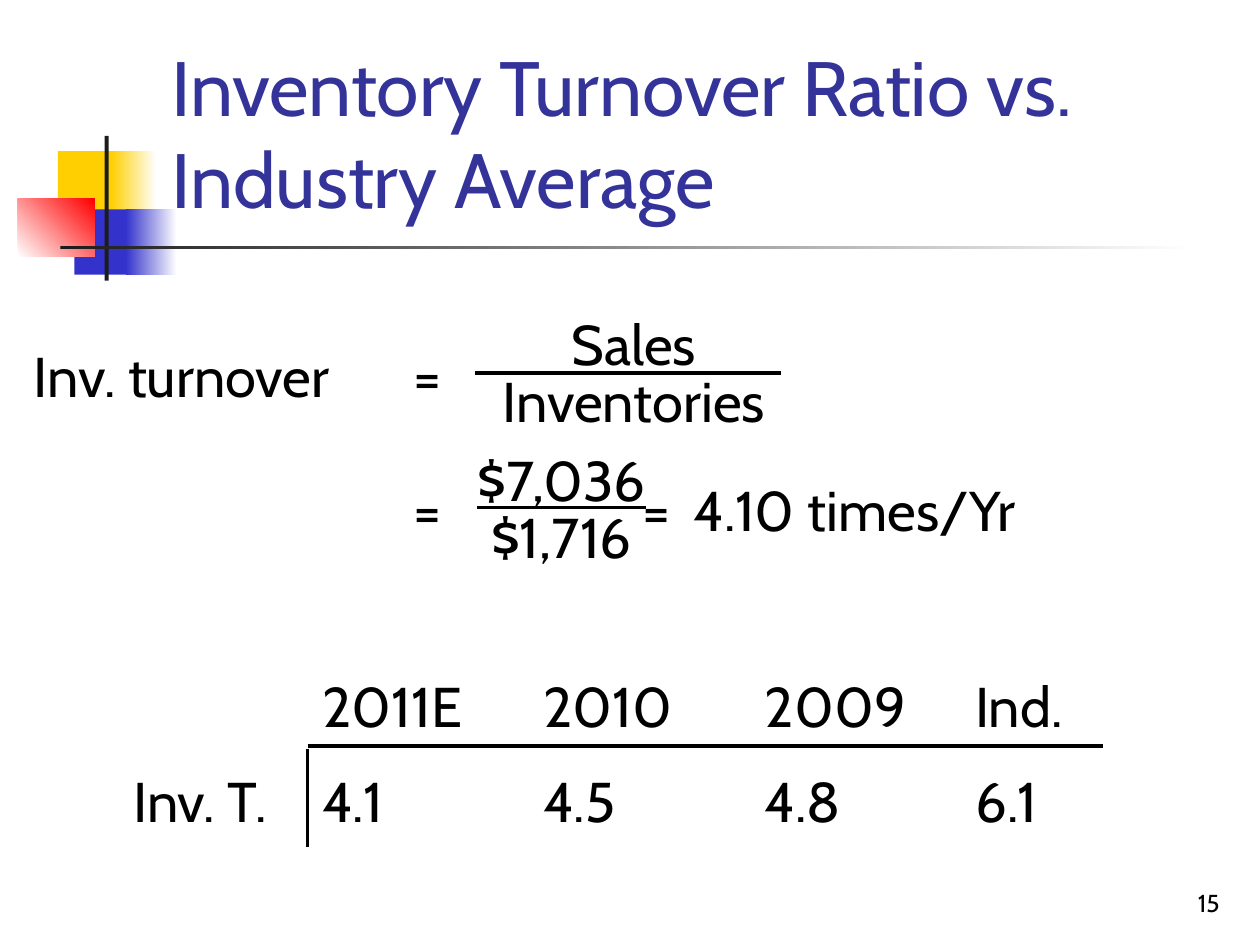
from pptx import Presentation
from pptx import util as u
from pptx.dml.color import RGBColor
from pptx.enum import shapes, text
from pptx.oxml.ns import qn
from lxml import etree

BLACK = RGBColor(0x00, 0x00, 0x00)
WHITE = RGBColor(0xFF, 0xFF, 0xFF)
YELLOW = RGBColor(0xFF, 0xCF, 0x01)
BLUE = RGBColor(0x33, 0x33, 0xCC)
RED = RGBColor(0xFF, 0x00, 0x00)
CHARCOAL = RGBColor(0x1C, 0x1C, 0x1C)
TITLE_BLUE = RGBColor(0x33, 0x33, 0x99)

FONT = "Cabin"
BODY_SIZE = 32
CENTER, RIGHT = text.PP_ALIGN.CENTER, text.PP_ALIGN.RIGHT


def add_block(slide, left, top, width, height, start, end=None, angle=0):
    """Borderless rectangle, solid or fading from start to end."""
    block = slide.shapes.add_shape(
        shapes.MSO_SHAPE.RECTANGLE, *map(u.Cm, (left, top, width, height)))
    block.shadow.inherit = False
    block.line.fill.background()
    if end is None:
        block.fill.solid()
        block.fill.fore_color.rgb = start
        return
    block.fill.gradient()
    block.fill.gradient_angle = angle
    for stop, color in zip(block.fill.gradient_stops, (start, end)):
        stop.color.rgb = color


def add_rule(slide, x1, y1, x2, y2):
    rule = slide.shapes.add_connector(
        shapes.MSO_CONNECTOR.STRAIGHT, *map(u.Cm, (x1, y1, x2, y2)))
    rule.line.color.rgb = BLACK
    rule.line.width = u.Pt(2)
    etree.SubElement(rule._element.spPr, qn("a:effectLst"))


def add_text(slide, box, lines, size=BODY_SIZE, color=BLACK, wrap=True,
             anchor=text.MSO_ANCHOR.TOP, tabs=(), **paragraph_format):
    """Text box with one paragraph per line; tabs are in cm from the inset."""
    frame = slide.shapes.add_textbox(*map(u.Cm, box)).text_frame
    frame.word_wrap = wrap
    frame.vertical_anchor = anchor
    for number, line in enumerate(lines):
        paragraph = frame.add_paragraph() if number else frame.paragraphs[0]
        for name, value in paragraph_format.items():
            setattr(paragraph, name, value)
        run = paragraph.add_run()
        run.text = line
        for name, value in {"name": FONT, "size": u.Pt(size)}.items():
            setattr(run.font, name, value)
        run.font.color.rgb = color
        if tabs:
            stops = etree.SubElement(
                paragraph._p.get_or_add_pPr(), qn("a:tabLst"))
            for position in tabs:
                etree.SubElement(stops, qn("a:tab"),
                                 pos=str(int(u.Cm(position))), algn="l")
    return frame.paragraphs


def add_ornament(slide, left, top):
    add_block(slide, left + 0.81, top + 0.31, 1.22, 1.32, YELLOW)
    add_block(slide, left + 1.88, top + 0.31, 0.91, 1.32, YELLOW, WHITE)
    add_block(slide, left + 1.14, top + 1.48, 1.17, 1.32, BLUE)
    add_block(slide, left + 2.18, top + 1.48, 1.02, 1.32, BLUE, WHITE)
    add_block(slide, left, top + 1.27, 1.55, 1.17, WHITE, RED, angle=45)
    add_block(slide, left + 1.75, top, 0.08, 2.92, CHARCOAL)
    add_block(slide, left + 0.86, top + 2.21, 22.86, 0.08, CHARCOAL, WHITE)


def add_fraction(slide, box, numerator, denominator):
    return add_text(slide, box, (numerator, denominator), wrap=False,
                    alignment=CENTER, line_spacing=0.85)


def add_turnover_equation(slide, left, top, width, height):
    lines = add_text(slide, (left, top + 0.44, width, height - 0.44),
                     ("Inv. turnover\t=", "\t=\t=\t4.10 times/Yr"),
                     tabs=(7.65, 12.27, 13.31))
    lines[1].space_before = u.Pt(38)
    add_fraction(slide, (left + 9.3, top, 6.1, 2.54), "Sales", "Inventories")
    add_rule(slide, left + 9.15, top + 1.2, left + 15.32, top + 1.2)
    amounts = add_fraction(slide, (left + 8.92, top + 2.75, 3.94, 2.54),
                           "$7,036", "$1,716")
    amounts[0].runs[0].font.underline = True


def add_ratio_comparison(slide, left, top, width, height):
    rows = (("", "2011E", "2010", "2009", "Ind."),
            ("Inv. T.", "4.1", "4.5", "4.8", "6.1"))
    lines = add_text(slide, (left, top, width, height),
                     ["\t".join(row) for row in rows],
                     tabs=(3.81, 8.26, 12.73, 16.97))
    lines[1].space_before = u.Pt(16)
    axis = left + 3.76
    add_rule(slide, axis, top + 1.63, axis + 16.03, top + 1.63)
    add_rule(slide, axis, top + 1.68, axis, top + 3.66)


def main():
    deck = Presentation()
    deck.slide_width, deck.slide_height = u.Cm(25.4), u.Cm(19.05)
    slide = deck.slides.add_slide(deck.slide_layouts[6])
    bottom = text.MSO_ANCHOR.BOTTOM

    add_ornament(slide, 0.36, 2.74)
    add_text(slide, (19.56, 17.35, 5.28, 1.27), ["15"], size=14,
             anchor=bottom, alignment=RIGHT)
    add_text(slide, (3.2, 0.58, 21.64, 4.06),
             ["Inventory Turnover Ratio vs. Industry Average"],
             size=44, color=TITLE_BLUE, anchor=bottom)
    add_turnover_equation(slide, 0.43, 6.32, 22.99, 4.78)
    add_ratio_comparison(slide, 2.44, 13.41, 21.54, 3.63)
    deck.save("out.pptx")


if __name__ == "__main__":
    main()
